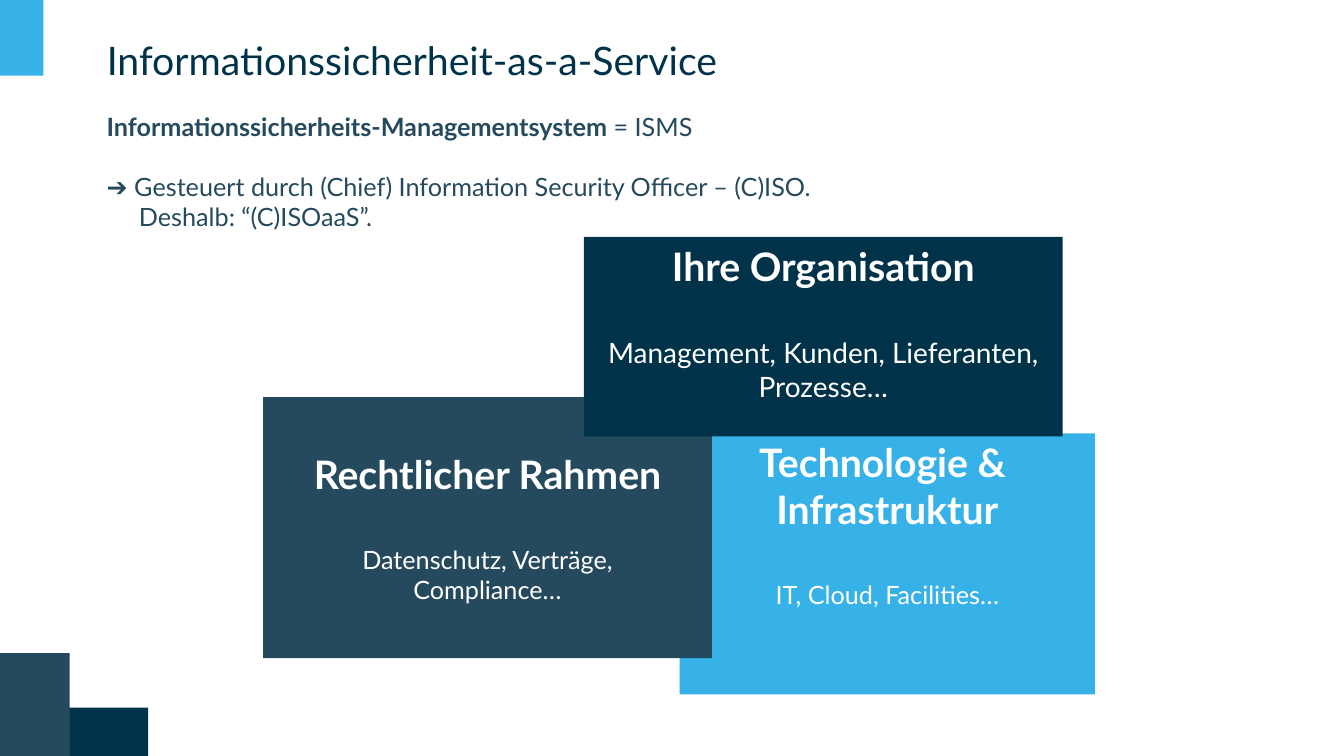
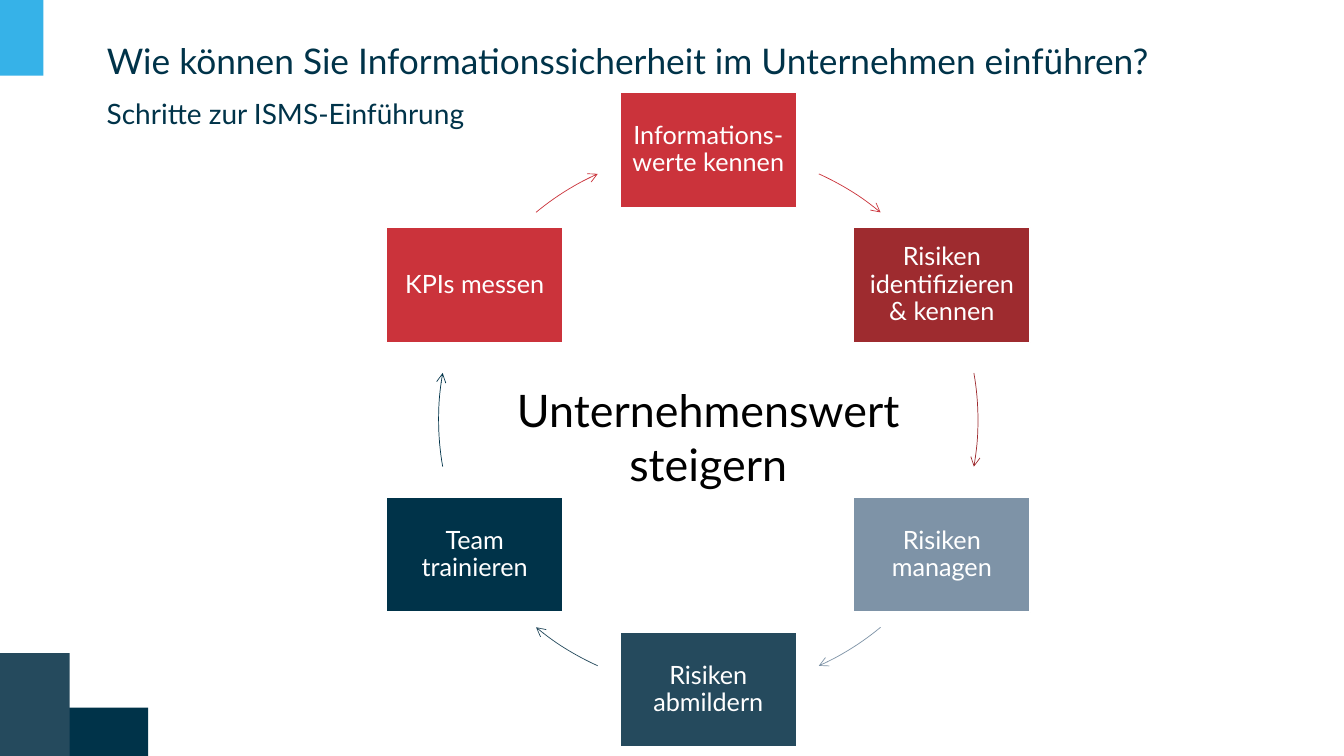
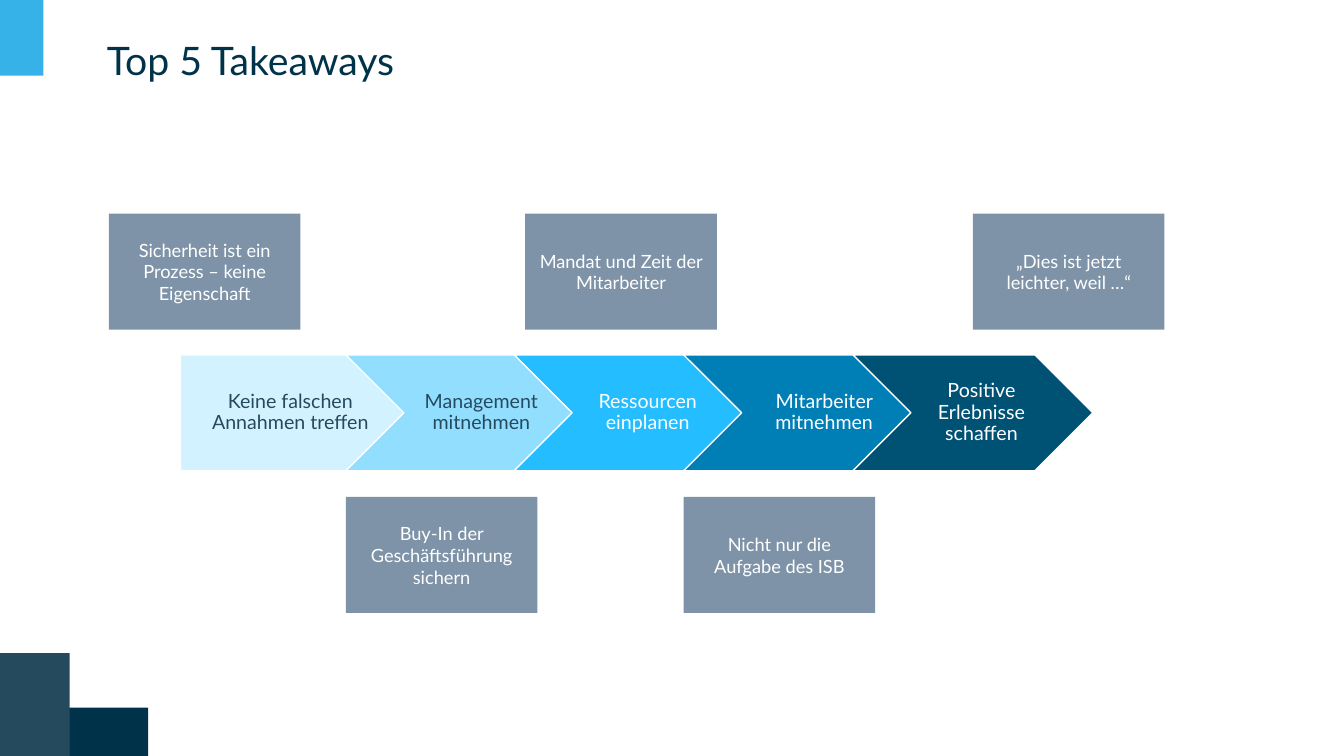
from dataclasses import dataclass
from math import cos, radians, sin

from lxml import etree
from pptx import Presentation
from pptx.dml.color import RGBColor
from pptx.enum.shapes import MSO_SHAPE
from pptx.enum.text import MSO_ANCHOR, PP_ALIGN
from pptx.oxml.ns import qn
from pptx.presentation import Presentation as Deck
from pptx.shapes.autoshape import Shape
from pptx.slide import Slide
from pptx.text.text import TextFrame
from pptx.util import Emu, Pt

RECTANGLE, ARC = MSO_SHAPE.RECTANGLE, MSO_SHAPE.ARC
CHEVRON, PENTAGON = MSO_SHAPE.CHEVRON, MSO_SHAPE.PENTAGON
TOP, MIDDLE = MSO_ANCHOR.TOP, MSO_ANCHOR.MIDDLE
LEFT, CENTER = PP_ALIGN.LEFT, PP_ALIGN.CENTER

EMU_PER_PX = 9144
FONT = "Lato"
NAVY, SLATE, SKY, STEEL = "003349", "254A5D", "36B2E8", "7E93A7"
RED, DARK_RED, WHITE, BLACK = "CB333B", "9E2B2F", "FFFFFF", "000000"
TEXT_INSETS = (10, 5, 10, 5)
CYCLE_INSETS = (7, 7, 7, 7)
CHEVRON_INSETS = (6, 4, 2, 4)

Area = tuple[float, float, float, float]


@dataclass(frozen=True)
class Span:
    text: str
    size: float
    bold: bool = False


@dataclass(frozen=True)
class Para:
    spans: tuple[Span, ...]
    before: float = 0
    indent: int = 0


@dataclass(frozen=True)
class Field:
    area: Area
    fill: str
    anchor: MSO_ANCHOR
    heading: str
    details: tuple[str, ...]
    detail_size: int


@dataclass(frozen=True)
class Step:
    label: str
    color: str
    arrow_start: float
    arrow_end: float


@dataclass(frozen=True)
class Takeaway:
    label: str
    fill: str
    color: str
    left: int
    label_left: int
    label_width: int
    note: tuple[str, ...]
    note_left: int


BANDS = (
    ((0, 0, 43, 75), SKY),
    ((0, 648, 69, 102), SLATE),
    ((68, 702, 79, 48), NAVY),
)

FIELDS = (
    Field((674, 430, 412, 259), SKY, TOP, "Technologie & \nInfrastruktur",
          ("IT, Cloud, Facilities…",), 18),
    Field((261, 394, 445, 259), SLATE, MIDDLE, "Rechtlicher Rahmen",
          ("Datenschutz, Verträge,", "Compliance…"), 18),
    Field((579, 235, 475, 198), NAVY, TOP, "Ihre Organisation",
          ("Management, Kunden, Lieferanten, Prozesse…",), 20),
)

CYCLE_AREA = (435, 149, 535, 535)
STEP_WIDTH, STEP_HEIGHT = 175, 114
STEPS = (
    Step("Informations-werte kennen", RED, 294.2, 309.7),
    Step("Risiken identifizieren & kennen", DARK_RED, 350, 10),
    Step("Risiken managen", STEEL, 50.3, 65.8),
    Step("Risiken abmildern", SLATE, 114.2, 129.7),
    Step("Team trainieren", NAVY, 170, 190),
    Step("KPIs messen", RED, 230.3, 245.8),
)

CHEVRON_TOP, CHEVRON_WIDTH, ROW_HEIGHT = 352, 238, 115
NOTE_TOPS, NOTE_WIDTH = (212, 493), 190
TAKEAWAYS = (
    Takeaway("Keine falschen Annahmen treffen", "D3F2FF", SLATE, 179, 179, 214,
             ("Sicherheit ist ein Prozess – keine Eigenschaft",), 108),
    Takeaway("Management mitnehmen", "92DEFF", SLATE, 343, 404, 143,
             ("Buy-In der Geschäftsführung sichern",), 343),
    Takeaway("Ressourcen einplanen", "24BDFF", WHITE, 510, 569, 143,
             ("Mandat und Zeit der Mitarbeiter",), 521),
    Takeaway("Mitarbeiter mitnehmen", "007FB6", WHITE, 678, 744, 143,
             ("Nicht nur die", "Aufgabe des ISB"), 678),
    Takeaway("Positive Erlebnisse schaffen", "005275", WHITE, 846, 900, 143,
             ("„Dies ist jetzt leichter, weil …“",), 965),
)


def px(length: float) -> Emu:
    return Emu(round(length * EMU_PER_PX))


def place(area: Area) -> list[Emu]:
    return [px(length) for length in area]


def rgb(color: str) -> RGBColor:
    return RGBColor.from_string(color)


def para(text: str, *, size: float, bold: bool = False,
         before: float = 0, indent: int = 0) -> Para:
    return Para((Span(text, size, bold),), before, indent)


def write(frame: TextFrame, paras: list[Para], *, color: str = WHITE,
          align: PP_ALIGN = CENTER, anchor: MSO_ANCHOR = MIDDLE,
          insets: Area = TEXT_INSETS, line_spacing: float = 1.0) -> None:
    frame.word_wrap = True
    frame.vertical_anchor = anchor
    (frame.margin_left, frame.margin_top,
     frame.margin_right, frame.margin_bottom) = place(insets)
    for index, item in enumerate(paras):
        paragraph = frame.add_paragraph() if index else frame.paragraphs[0]
        paragraph.alignment = align
        paragraph.line_spacing = line_spacing
        paragraph.space_before = Pt(item.before)
        if item.indent:
            paragraph._p.get_or_add_pPr().set("marL", str(px(item.indent)))
        for span in item.spans:
            for number, line in enumerate(span.text.split("\n")):
                if number:
                    paragraph.add_line_break()
                run = paragraph.add_run()
                run.text = line
                run.font.name = FONT
                run.font.size = Pt(span.size)
                run.font.bold = span.bold
                run.font.color.rgb = rgb(color)


def add_box(slide: Slide, area: Area, fill: str, *,
            kind: MSO_SHAPE = RECTANGLE, outlined: bool = False) -> Shape:
    box = slide.shapes.add_shape(kind, *place(area))
    box.shadow.inherit = False
    box.fill.solid()
    box.fill.fore_color.rgb = rgb(fill)
    if outlined:
        box.line.color.rgb = rgb(WHITE)
        box.line.width = Pt(1)
    else:
        box.line.fill.background()
    return box


def add_text(slide: Slide, area: Area, paras: list[Para], **text_format) -> None:
    write(slide.shapes.add_textbox(*place(area)).text_frame, paras, **text_format)


def add_arc_arrow(slide: Slide, step: Step) -> None:
    arc = slide.shapes.add_shape(ARC, *place(CYCLE_AREA))
    arc.shadow.inherit = False
    arc.fill.background()
    arc.line.color.rgb = rgb(step.color)
    arc.line.width = Pt(0.5)
    arc.adjustments[0] = step.arrow_start * 0.6
    arc.adjustments[1] = step.arrow_end * 0.6
    etree.SubElement(arc.line._get_or_add_ln(), qn("a:tailEnd"), type="arrow")


def add_slide(deck: Deck, title: str, size: float = 28) -> Slide:
    slide = deck.slides.add_slide(deck.slide_layouts[5])
    heading = slide.shapes.title
    heading.left, heading.top, heading.width, heading.height = place((96, 33, 1142, 59))
    write(heading.text_frame, [para(title, size=size)],
          color=NAVY, align=LEFT, line_spacing=0.9)
    return slide


def move_bands_to_master(deck: Deck, slide: Slide) -> None:
    for index, (area, fill) in enumerate(BANDS):
        band = add_box(slide, area, fill)
        band.element.nvSpPr.cNvPr.id = 101 + index
        deck.slide_master.shapes.element.insert(2, band.element)


def build_service(deck: Deck) -> None:
    slide = add_slide(deck, "Informationssicherheit-as-a-Service")
    move_bands_to_master(deck, slide)
    for field in FIELDS:
        paras = [para(field.heading, size=28, bold=True)]
        for index, detail in enumerate(field.details):
            paras.append(para(detail, size=field.detail_size, before=0 if index else 33.6))
        write(add_box(slide, field.area, field.fill).text_frame, paras, anchor=field.anchor)
    add_text(slide, (96, 105, 1086, 162), [
        Para((Span("Informationssicherheits-Managementsystem ", 18, True),
              Span("= ISMS", 18))),
        para("➔ Gesteuert durch (Chief) Information Security Officer – (C)ISO.",
             size=18, before=21.6),
        para("Deshalb: “(C)ISOaaS”.", size=18, indent=32),
    ], color=SLATE, align=LEFT, anchor=TOP)


def build_cycle(deck: Deck) -> None:
    slide = add_slide(
        deck, "Wie können Sie Informationssicherheit im Unternehmen einführen?", 25.2)
    add_text(slide, (96, 91, 667, 44), [para("Schritte zur ISMS-Einführung", size=20)],
             color=NAVY, align=LEFT, anchor=TOP)
    left, top, diameter, _ = CYCLE_AREA
    radius = diameter / 2
    for index, step in enumerate(STEPS):
        angle = radians(index * 360 / len(STEPS))
        area = (left + radius + radius * sin(angle) - STEP_WIDTH / 2,
                top + radius - radius * cos(angle) - STEP_HEIGHT / 2,
                STEP_WIDTH, STEP_HEIGHT)
        box = add_box(slide, area, step.color, outlined=True)
        write(box.text_frame, [para(step.label, size=18)],
              insets=CYCLE_INSETS, line_spacing=0.9)
        add_arc_arrow(slide, step)
    add_text(slide, (489, 375, 427, 118), [para("Unternehmenswert steigern", size=32)],
             color=BLACK, anchor=TOP)


def build_takeaways(deck: Deck) -> None:
    slide = add_slide(deck, "Top 5 Takeaways")
    for index, item in enumerate(TAKEAWAYS):
        add_box(slide, (item.left, CHEVRON_TOP, CHEVRON_WIDTH, ROW_HEIGHT), item.fill,
                kind=CHEVRON if index else PENTAGON, outlined=True)
        add_text(slide, (item.label_left, CHEVRON_TOP, item.label_width, ROW_HEIGHT),
                 [para(item.label, size=14)], color=item.color,
                 insets=CHEVRON_INSETS, line_spacing=0.9)
        note = add_box(slide, (item.note_left, NOTE_TOPS[index % 2], NOTE_WIDTH, ROW_HEIGHT),
                       STEEL)
        write(note.text_frame, [para(line, size=13) for line in item.note])


def main() -> None:
    deck = Presentation()
    deck.slide_width, deck.slide_height = px(1333), px(750)
    build_service(deck)
    build_cycle(deck)
    build_takeaways(deck)
    deck.save("out.pptx")


if __name__ == "__main__":
    main()
